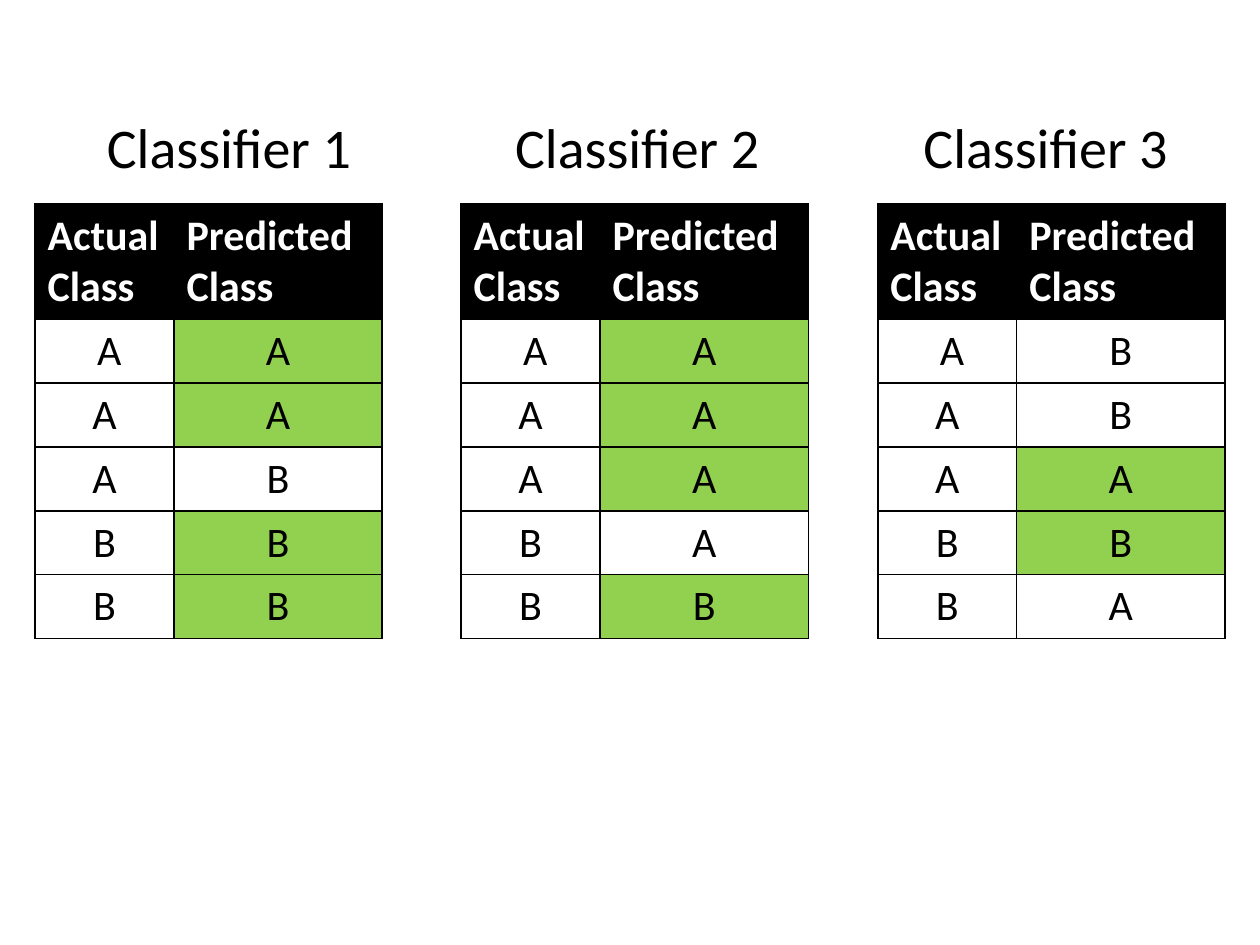
from lxml.etree import SubElement
from pptx import Presentation
from pptx.dml.color import RGBColor
from pptx.enum.text import MSO_ANCHOR, PP_ALIGN
from pptx.oxml.ns import qn
from pptx.util import Pt

BLACK, WHITE, GREEN = "000000", "FFFFFF", "92D050"
HEADERS = ("Actual Class", "Predicted Class")
ACTUAL = "AAABB"
PREDICTIONS = ("AABBB", "AAAAB", "BBABA")
TABLE_LEFTS = (20, 263.5, 501.6)
TABLE_TOP = 116.6
COLUMN_WIDTHS = (79.4, 119)
HEADER_HEIGHT, ROW_HEIGHT = 65.8, 36.5
HEADING_PITCH = 233.3


def color(hex_string):
    return RGBColor.from_string(hex_string)


class SlideBuilder:
    """Holds the text style and the slide being filled."""

    font = "Calibri"

    def __init__(self, slide):
        self.slide = slide

    def run(self, paragraph, text, size, ink=BLACK, bold=False):
        run = paragraph.add_run()
        run.text = text
        run.font.name = self.font
        run.font.size = Pt(size)
        run.font.bold = bold
        run.font.color.rgb = color(ink)

    def headings(self, labels, left, top, width, height, pitch):
        """One line of labels set on evenly spaced tab stops."""
        box = self.slide.shapes.add_textbox(Pt(left), Pt(top), Pt(width), Pt(height))
        box.text_frame.word_wrap = True
        paragraph = box.text_frame.paragraphs[0]
        self.run(paragraph, "\t".join(labels), 32)
        tab_list = SubElement(paragraph._p.get_or_add_pPr(), qn("a:tabLst"))
        for stop in range(1, len(labels)):
            SubElement(tab_list, qn("a:tab"), pos=str(Pt(stop * pitch)), algn="l")

    def borders(self, cell):
        properties = cell._tc.get_or_add_tcPr()
        for side in ("a:lnL", "a:lnR", "a:lnT", "a:lnB"):
            line = SubElement(properties, qn(side), w=str(Pt(1)))
            fill = SubElement(line, qn("a:solidFill"))
            SubElement(fill, qn("a:srgbClr"), val=BLACK)

    def cell(self, cell, text, fill=None, header=False):
        self.borders(cell)
        if fill:
            cell.fill.solid()
            cell.fill.fore_color.rgb = color(fill)
        else:
            cell.fill.background()
        cell.vertical_anchor = MSO_ANCHOR.TOP
        paragraph = cell.text_frame.paragraphs[0]
        paragraph.alignment = PP_ALIGN.LEFT if header else PP_ALIGN.CENTER
        self.run(paragraph, text, 24, WHITE if header else BLACK, header)

    def classifier_table(self, left, top, actual, predicted):
        """Class table with the correct predictions in green."""
        height = HEADER_HEIGHT + ROW_HEIGHT * len(actual)
        table = self.slide.shapes.add_table(
            len(actual) + 1, len(HEADERS),
            Pt(left), Pt(top), Pt(sum(COLUMN_WIDTHS)), Pt(height)).table
        for column, width in zip(table.columns, COLUMN_WIDTHS):
            column.width = Pt(width)
        for index, row in enumerate(table.rows):
            row.height = Pt(ROW_HEIGHT if index else HEADER_HEIGHT)

        for column, header in enumerate(HEADERS):
            self.cell(table.cell(0, column), header, BLACK, header=True)
        for row, (truth, guess) in enumerate(zip(actual, predicted), start=1):
            self.cell(table.cell(row, 0), " " + truth if row == 1 else truth)
            self.cell(table.cell(row, 1), guess, GREEN if guess == truth else None)


def main():
    presentation = Presentation()
    presentation.slide_width, presentation.slide_height = Pt(720), Pt(540)
    blank_layout = presentation.slide_layouts[6]
    builder = SlideBuilder(presentation.slides.add_slide(blank_layout))

    # Classifier tables
    for left, predicted in zip(TABLE_LEFTS, PREDICTIONS):
        builder.classifier_table(left, TABLE_TOP, ACTUAL, predicted)

    # Headings above the tables
    labels = [f"Classifier {number}" for number in range(1, len(PREDICTIONS) + 1)]
    builder.headings(labels, 54, 60.5, 628.6, 46, HEADING_PITCH)

    presentation.save("out.pptx")


if __name__ == "__main__":
    main()
